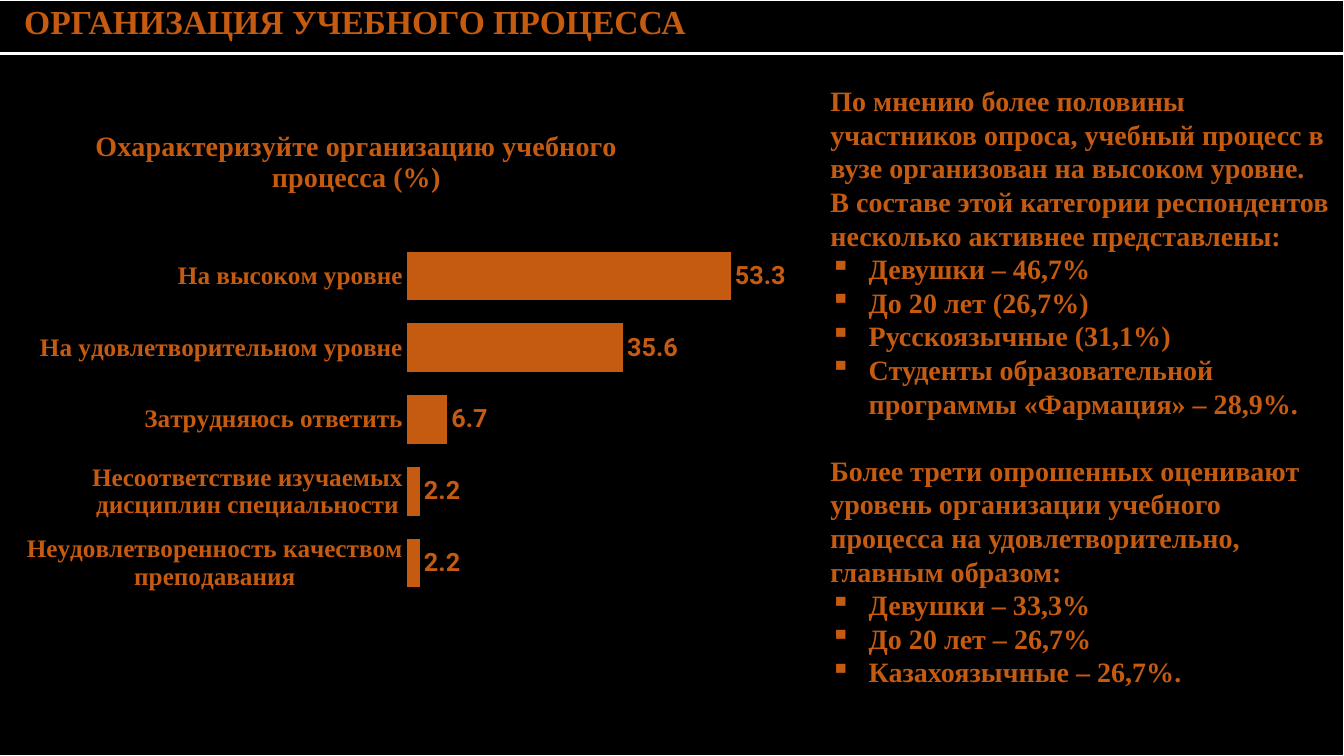
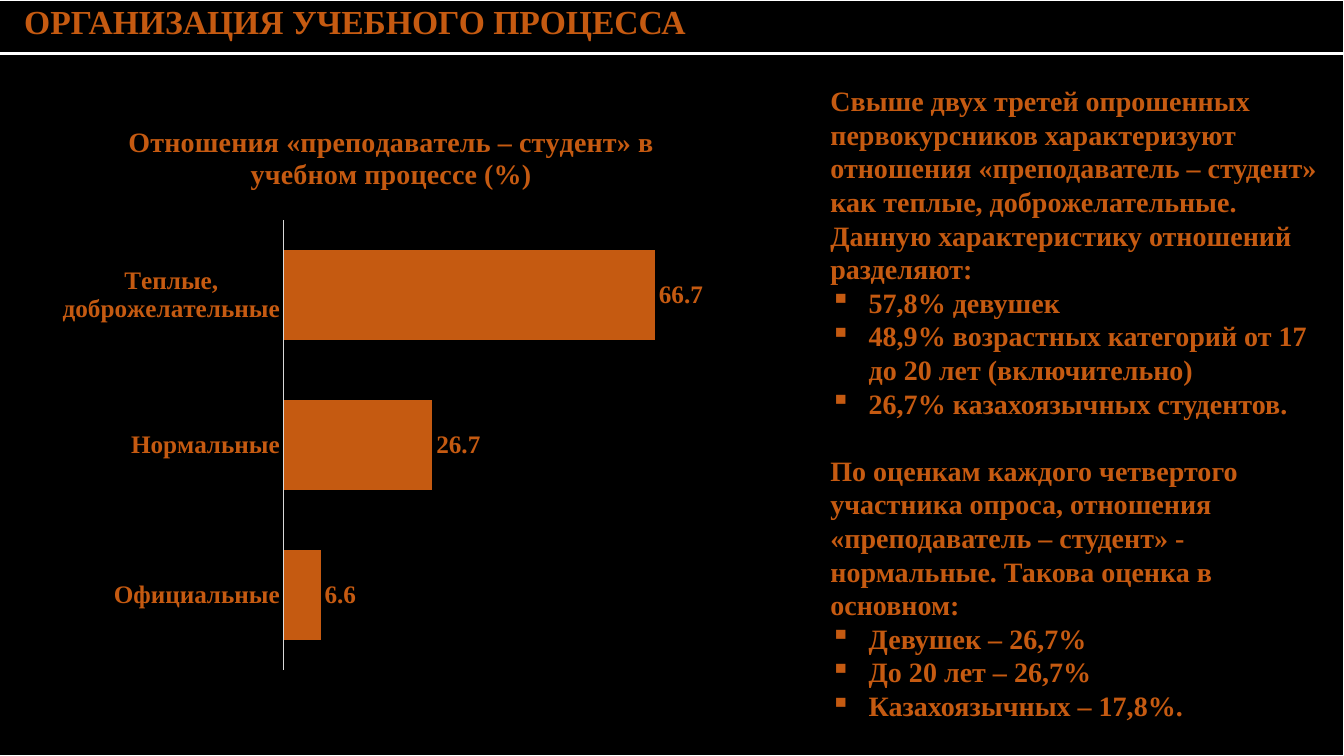
from dataclasses import dataclass

from pptx import Presentation
from pptx.chart.data import CategoryChartData
from pptx.dml.color import RGBColor
from pptx.enum.chart import XL_CHART_TYPE, XL_LABEL_POSITION, XL_TICK_MARK
from pptx.oxml import parse_xml
from pptx.oxml.ns import nsdecls, qn
from pptx.util import Inches, Pt


@dataclass(frozen=True)
class Theme:
    accent: str = "C55A11"
    panel: str = "000000"
    rule: str = "FFFFFF"
    axis: str = "D9D9D9"
    serif: str = "Times New Roman"
    sans: str = "Roboto"
    heading: int = 24
    body: int = 20
    label: int = 18
    section_gap: int = 24
    thin: int = 1
    thick: int = 3


def apply(target, values):
    for name, value in values.items():
        setattr(target, name, value)


def set_layout(parent, index, **shares):
    for old in parent.findall(qn("c:layout")):
        parent.remove(old)
    target = '<c:layoutTarget val="inner"/>' if "w" in shares else ""
    modes = "".join(f'<c:{key}Mode val="edge"/>' for key in "xy")
    sizes = "".join(f'<c:{key} val="{share}"/>' for key, share in shares.items())
    parent.insert(index, parse_xml(
        f'<c:layout {nsdecls("c")}><c:manualLayout>{target}{modes}{sizes}'
        "</c:manualLayout></c:layout>"))


class Deck:
    """Draws survey slides on a grid of 160 columns by 90 rows."""

    columns, rows = 160, 90

    def __init__(self, theme):
        self.theme = theme
        self.deck = Presentation()
        apply(self.deck, {"slide_width": Inches(13.33), "slide_height": Inches(7.5)})
        self.slide = None

    def grid(self, left, top, width, height):
        across = self.deck.slide_width / self.columns
        down = self.deck.slide_height / self.rows
        return [round(n * unit) for n, unit in
                zip((left, top, width, height), (across, down, across, down))]

    def style(self, font, size, face=None):
        apply(font, {"name": face or self.theme.serif, "size": Pt(size), "bold": True})
        font.color.rgb = RGBColor.from_string(self.theme.accent)

    def add_words(self, paragraph, words, size):
        run = paragraph.add_run()
        run.text = words
        self.style(run.font, size)

    def panel(self, cell, **borders):
        cell.fill.solid()
        cell.fill.fore_color.rgb = RGBColor.from_string(self.theme.panel)
        properties = cell._tc.get_or_add_tcPr()
        for index, side in enumerate("LRTB"):
            width = Pt(borders.get(side, self.theme.thin))
            properties.insert(index, parse_xml(
                f'<a:ln{side} {nsdecls("a")} w="{width}"><a:solidFill>'
                f'<a:srgbClr val="{self.theme.rule}"/></a:solidFill></a:ln{side}>'))

    def frame(self, heading):
        self.slide = self.deck.slides.add_slide(self.deck.slide_layouts[6])
        area = self.grid(-1.8, 0, 161.8, 90)
        table = self.slide.shapes.add_table(2, 1, *area).table
        apply(table, {"first_row": False, "horz_banding": False})
        table.rows[0].height = self.grid(0, 0, 0, 6.36)[3]
        table.rows[1].height = area[3] - table.rows[0].height
        header, content = table.cell(0, 0), table.cell(1, 0)
        self.panel(header, B=self.theme.thick)
        self.panel(content, T=self.theme.thick)
        header.margin_left = self.grid(4.68, 0, 0, 0)[0]
        self.add_words(header.text_frame.paragraphs[0], heading, self.theme.heading)

    def bars(self, area, title, answers, title_at, plot, top_value, gap, axis_color,
             label_face):
        data = CategoryChartData(number_format="0.0")
        data.categories = [answer for answer, _ in answers]
        data.add_series("Series 1", [share for _, share in answers])
        chart = self.slide.shapes.add_chart(
            XL_CHART_TYPE.BAR_CLUSTERED, *self.grid(*area), data).chart
        apply(chart, {"has_legend": False, "has_title": True})
        apply(chart.font, {"name": "Calibri", "size": Pt(10)})

        self.add_words(chart.chart_title.text_frame.paragraphs[0], title,
                       self.theme.body)
        set_layout(chart.chart_title._element, 1, **dict(zip("xy", title_at)))
        set_layout(chart._chartSpace.chart.plotArea, 0, **dict(zip("xywh", plot)))

        answer_axis = chart.category_axis
        apply(answer_axis, {"major_tick_mark": XL_TICK_MARK.NONE,
                            "has_major_gridlines": False})
        self.style(answer_axis.tick_labels.font, self.theme.label)
        answer_axis.format.line.width = Pt(0.75)
        answer_axis.format.line.color.rgb = RGBColor.from_string(axis_color)
        apply(chart.value_axis, {"visible": False, "has_major_gridlines": False,
                                 "minimum_scale": 0, "maximum_scale": top_value})

        shares = chart.plots[0]
        apply(shares, {"gap_width": gap, "vary_by_categories": False,
                       "has_data_labels": True})
        apply(shares.data_labels, {"show_value": True, "number_format": "0.0",
                                   "number_format_is_linked": False,
                                   "position": XL_LABEL_POSITION.OUTSIDE_END})
        self.style(shares.data_labels.font, self.theme.label, label_face)
        fill = shares.series[0].format.fill
        fill.solid()
        fill.fore_color.rgb = RGBColor.from_string(self.theme.accent)

    def bullet(self, paragraph):
        properties = paragraph._p.get_or_add_pPr()
        indent = Inches(0.38)
        for name, value in {"marL": indent, "indent": -indent}.items():
            properties.set(name, str(value))
        properties.append(parse_xml(f'<a:buChar {nsdecls("a")} char="▪"/>'))

    def findings(self, sections):
        box = self.slide.shapes.add_textbox(*self.grid(97.68, 9.36, 62.3, 78))
        frame = box.text_frame
        frame.word_wrap = True
        paragraph = frame.paragraphs[0]
        for number, (statements, groups) in enumerate(sections):
            for order, words in enumerate(statements + groups):
                if number or order:
                    paragraph = frame.add_paragraph()
                if number and not order:
                    paragraph.space_before = Pt(self.theme.section_gap)
                if order >= len(statements):
                    self.bullet(paragraph)
                self.add_words(paragraph, words, self.theme.body)


def main():
    theme = Theme()
    survey = Deck(theme)
    heading = "ОРГАНИЗАЦИЯ УЧЕБНОГО ПРОЦЕССА"

    survey.frame(heading)
    survey.bars(
        area=(1.08, 12.24, 96.6, 77.76),
        title="Охарактеризуйте организацию учебного процесса (%)",
        answers=[
            ("", None),
            ("", None),
            ("Неудовлетворенность качеством преподавания", 2.2),
            ("Несоответствие изучаемых дисциплин специальности", 2.2),
            ("Затрудняюсь ответить", 6.7),
            ("На удовлетворительном уровне", 35.6),
            ("На высоком уровне", 53.3),
        ],
        title_at=(0.1, 0.03), plot=(0.49, 0.21, 0.45, 0.77), top_value=60, gap=48,
        axis_color=theme.panel, label_face=theme.sans)
    survey.findings([
        (["По мнению более половины участников опроса, учебный процесс в вузе "
          "организован на высоком уровне.",
          "В составе этой категории респондентов несколько активнее представлены:"],
         ["Девушки – 46,7%", "До 20 лет (26,7%)", "Русскоязычные (31,1%)",
          "Студенты образовательной программы «Фармация» – 28,9%."]),
        (["Более трети опрошенных оценивают уровень организации учебного процесса "
          "на удовлетворительно, главным образом:"],
         ["Девушки – 33,3%", "До 20 лет – 26,7%", "Казахоязычные – 26,7%."]),
    ])

    survey.frame(heading)
    survey.bars(
        area=(2.52, 11.16, 86.88, 75.36),
        title="Отношения «преподаватель – студент» в учебном процессе (%)",
        answers=[
            ("Официальные", 6.6),
            ("Нормальные", 26.7),
            ("Теплые, доброжелательные", 66.7),
        ],
        title_at=(0.14, 0.04), plot=(0.36, 0.2, 0.61, 0.71), top_value=80, gap=66,
        axis_color=theme.axis, label_face=theme.serif)
    survey.findings([
        (["Свыше двух третей опрошенных первокурсников характеризуют отношения "
          "«преподаватель – студент» как теплые, доброжелательные. Данную "
          "характеристику отношений разделяют:"],
         ["57,8% девушек", "48,9% возрастных категорий от 17 до 20 лет (включительно)",
          "26,7% казахоязычных студентов."]),
        (["По оценкам каждого четвертого участника опроса, отношения "
          "«преподаватель – студент» - нормальные. Такова оценка в основном:"],
         ["Девушек – 26,7%", "До 20 лет – 26,7%", "Казахоязычных – 17,8%."]),
    ])
    survey.deck.save("out.pptx")


if __name__ == "__main__":
    main()
